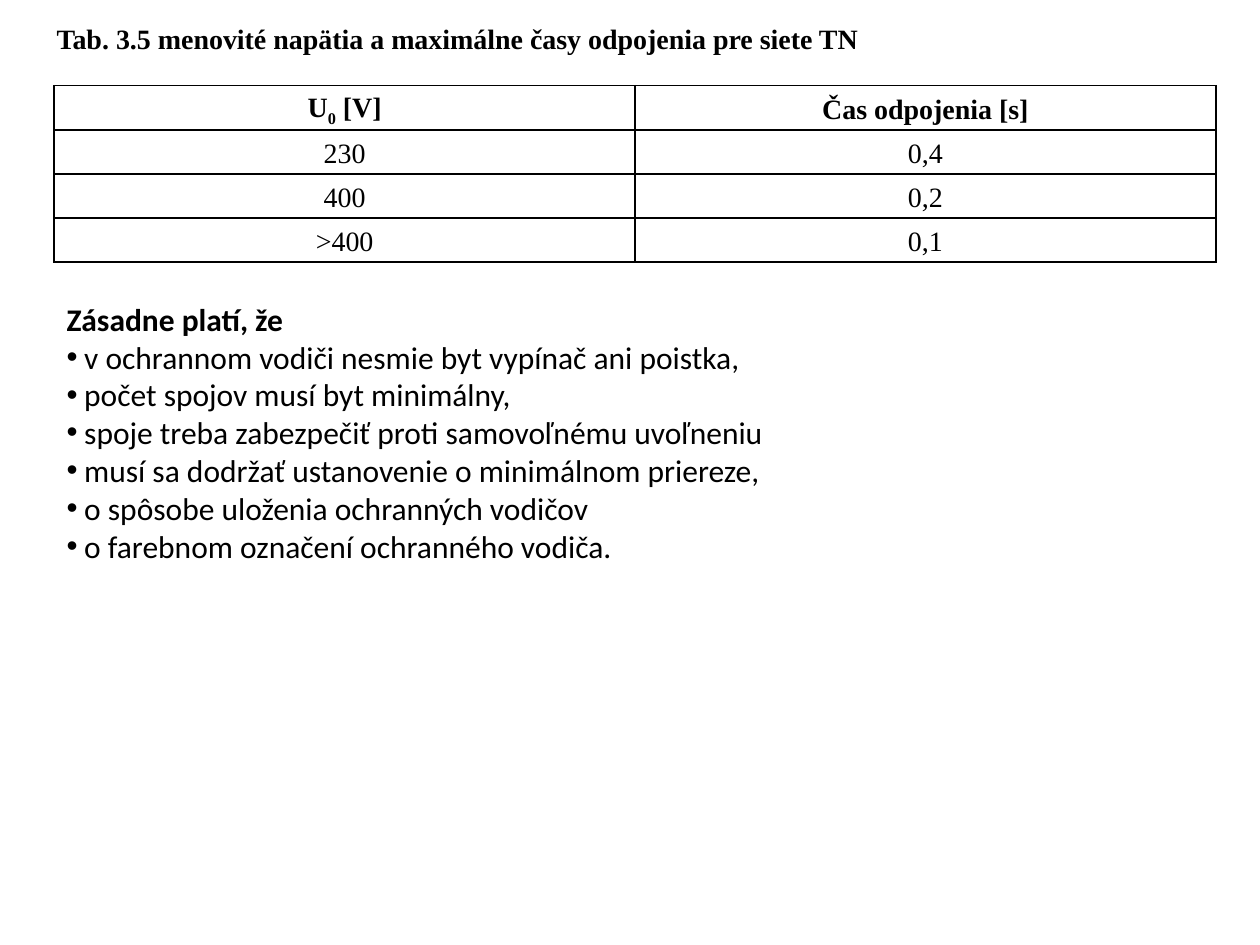
from pptx import Presentation, util as u
from pptx.dml.color import RGBColor
from pptx.enum import text
from pptx.oxml import parse_xml
from pptx.oxml.ns import nsdecls

BLACK = RGBColor(0, 0, 0)
WHITE = RGBColor(255, 255, 255)
SERIF = dict(name="Times New Roman", size=u.Pt(16))
SANS = dict(name="Calibri", size=u.Pt(18))

prs = Presentation()
prs.slide_width, prs.slide_height = u.Inches(10), u.Inches(7.5)
s = prs.slides.add_slide(prs.slide_layouts[6])
s.background.fill.solid()
s.background.fill.fore_color.rgb = WHITE


def add_run(p, words, **font):
    r = p.add_run()
    r.text = words
    r.font.color.rgb = BLACK
    for key, value in font.items():
        setattr(r.font, key, value)
    return r


def add_box(left, top, width, height, wrap):
    sp = s.shapes.add_textbox(*map(u.Inches, (left, top, width, height)))
    sp.text_frame.word_wrap = wrap
    return sp.text_frame


# Table of voltages and disconnection times
rows = [
    (("U", "0", " [V]"), ("Čas odpojenia [s]",)),
    (("230",), ("0,4",)),
    (("400",), ("0,2",)),
    ((">400",), ("0,1",)),
]
col_w, row_h = 4.61, 0.35
frame = s.shapes.add_table(len(rows), 2, u.Inches(0.43), u.Inches(0.68),
                           u.Inches(2 * col_w), u.Inches(len(rows) * row_h))
table = frame.table
table.horz_banding = False
cell_format = dict(margin_left=u.Inches(0.07), margin_right=u.Inches(0.07),
                   margin_top=0, margin_bottom=0,
                   vertical_anchor=text.MSO_ANCHOR.MIDDLE)
for i, row in enumerate(rows):
    for j, parts in enumerate(row):
        cell = table.cell(i, j)
        for key, value in cell_format.items():
            setattr(cell, key, value)
        p = cell.text_frame.paragraphs[0]
        p.alignment, p.line_spacing = text.PP_ALIGN.CENTER, 1.15
        for part in parts:
            r = add_run(p, part, bold=i == 0, **SERIF)
            if part == "0":
                r.font._element.set("baseline", "-25000")
        # Borders come before the fill in the cell properties
        for side in ("lnL", "lnR", "lnT", "lnB"):
            cell._tc.get_or_add_tcPr().append(parse_xml(
                f'<a:{side} {nsdecls("a")} w="12700"><a:solidFill>'
                f'<a:srgbClr val="{BLACK}"/></a:solidFill></a:{side}>'))
        cell.fill.background()

# Table caption
tf = add_box(0.35, 0.12, 6.65, 0.67, False)
add_run(tf.paragraphs[0],
        "Tab. 3.5 menovité napätia a\u00a0maximálne časy odpojenia pre siete TN",
        bold=True, **SERIF)

# Heading and bulleted rules
rules = [
    "v ochrannom vodiči nesmie byt vypínač ani poistka,",
    "počet spojov musí byt minimálny,",
    "spoje treba zabezpečiť proti samovoľnému uvoľneniu",
    "musí sa dodržať ustanovenie o\u00a0minimálnom priereze,",
    "o spôsobe uloženia ochranných vodičov",
    "o farebnom označení ochranného vodiča.",
]
tf = add_box(0.43, 2.33, 9.29, 2.22, True)
add_run(tf.paragraphs[0], "Zásadne platí, že", bold=True, **SANS)
hang = u.Inches(0.14)
for rule in rules:
    p = tf.add_paragraph()
    add_run(p, rule, bold=False, **SANS)
    pPr = p._p.get_or_add_pPr()
    pPr.set("marL", str(hang))
    pPr.set("indent", str(-hang))
    pPr.append(parse_xml(f'<a:buFont {nsdecls("a")} typeface="Arial"/>'))
    pPr.append(parse_xml(f'<a:buChar {nsdecls("a")} char="•"/>'))

prs.save("out.pptx")
